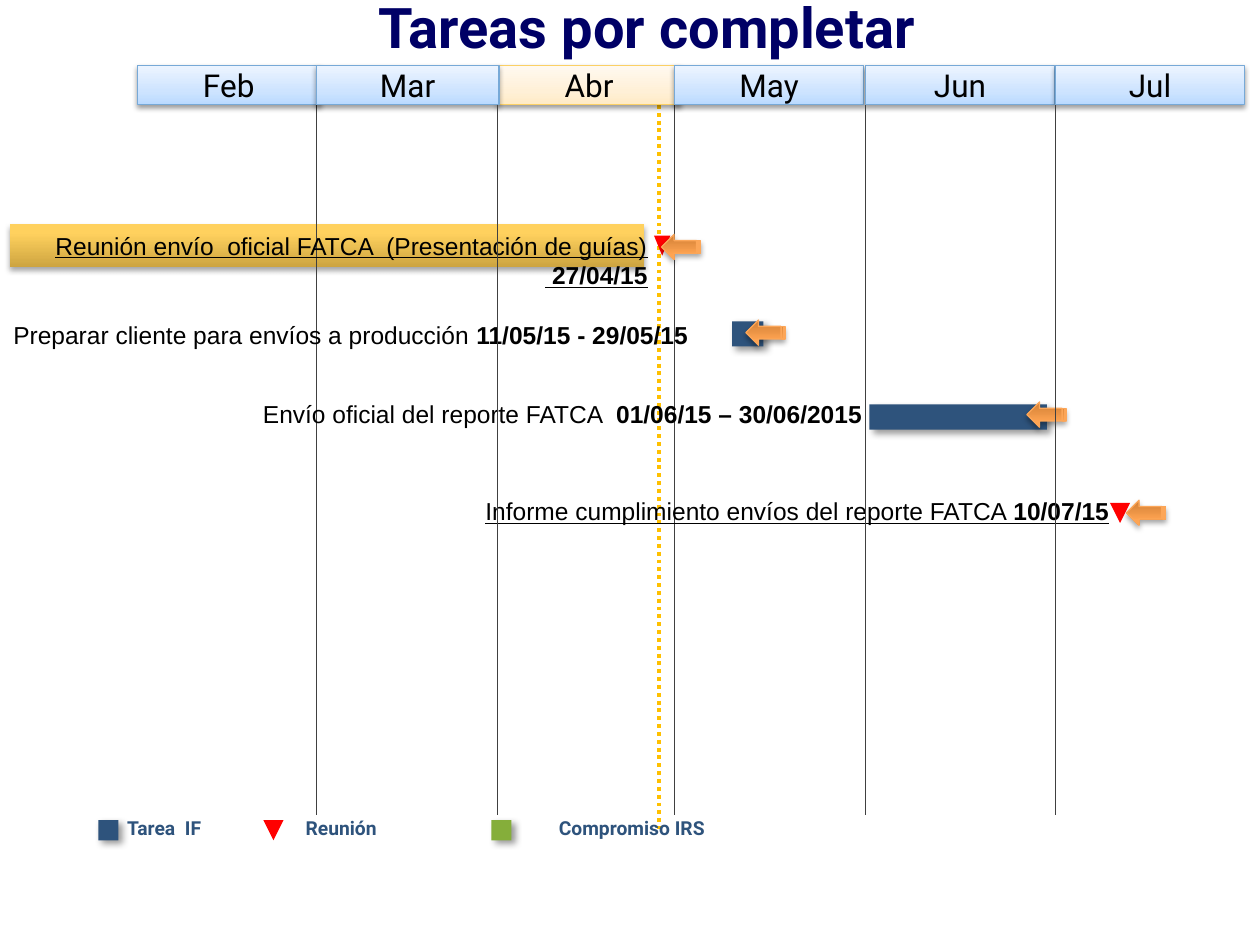
from copy import deepcopy

from lxml.etree import SubElement
from pptx import Presentation
from pptx.dml.color import RGBColor
from pptx.enum.dml import MSO_LINE
from pptx.enum.shapes import MSO_CONNECTOR, MSO_SHAPE
from pptx.enum.text import MSO_ANCHOR, PP_ALIGN
from pptx.oxml.ns import qn
from pptx.util import Pt

COLOURS = {
    "title": "000066", "text": "000000", "task": "2E537C", "meeting": "FF0000",
    "irs": "85AE3A", "grid": "404040", "today": "FFC000",
    "month_line": "77A9D7", "current_line": "FBD065", "arrow_line": "FCA658",
}
GRADIENTS = {
    "month": [(0, "BADAFF"), (0.35, "CEE4FF"), (1, "ECF4FF")],
    "current": [(0, "FFEBC6"), (0.35, "FFF0D7"), (1, "FFF9F0")],
    "highlight": [(0, "CDA440"), (0.8, "FFD15E"), (1, "FFD15F")],
    "arrow": [(0, "CF7E34"), (0.8, "FFA452"), (1, "FFA554")],
}
SHADOWS = {
    "month": (38, 3.1, 1.6, 90),
    "glow": (35, 3.1, 1.8, 90),
    "bar": (40, 4, 3, 45),
}
MONTHS = {
    "Abr": (284.4, 104.4), "Feb": (78.5, 104.4), "Mar": (180.7, 104.4),
    "May": (385.5, 108), "Jun": (494.6, 108), "Jul": (603.2, 108),
}
MONTH_TOP, MONTH_HEIGHT = 37.6, 22.2
GRID_TOP, GRID_BOTTOM = 60, 465.5
LEGEND_TOP, MARK_SIZE = 468.7, 11.5
LABELS = [
    ((8.6, 128.2, 368.6, 41), True,
     [[("Reunión envío  oficial FATCA  (Presentación de guías)", False)],
      [(" ", False), ("27/04/15", True)]]),
    ((-106.6, 179.3, 506.9, 24.5), False,
     [[("Preparar cliente para envíos a producción ", False),
       ("11/05/15 - 29/05/15", True)]]),
    ((135.4, 224.6, 364.3, 41), False,
     [[("Envío oficial del reporte FATCA  ", False),
       ("01/06/15 – 30/06/2015", True)]]),
    ((174.2, 280.1, 466.6, 24.5), True,
     [[("Informe cumplimiento envíos del reporte FATCA ", False),
       ("10/07/15", True)]]),
]
TASK_BARS = [(418.3, 183.6, 18, 14.4), (496.8, 231.1, 101.5, 14.4)]
MEETINGS = [(373.7, 134.6, 9.4, 11.5), (634.3, 287.3, 11.5, 11.5),
            (150.5, LEGEND_TOP, MARK_SIZE, MARK_SIZE)]
ARROWS = [(378, 133.9), (426.2, 182.9), (586.8, 229.7), (643.7, 285.8)]


def rgb(name):
    return RGBColor.from_string(COLOURS[name])


def style_font(font, size, name, colour, bold=False):
    font.size, font.name, font.bold = Pt(size), name, bold
    font.color.rgb = rgb(colour)


def add_shadow(shape, name):
    alpha, blur, distance, angle = SHADOWS[name]
    effects = shape._element.spPr.find(qn("a:effectLst"))
    outer = SubElement(effects, qn("a:outerShdw"), blurRad=str(Pt(blur)),
                       dist=str(Pt(distance)), dir=str(angle * 60000),
                       rotWithShape="0")
    tone = SubElement(outer, qn("a:srgbClr"), val=COLOURS["text"])
    SubElement(tone, qn("a:alpha"), val=str(alpha * 1000))


def fill_gradient(shape, name):
    shape.fill.gradient()
    shape.fill.gradient_angle = 90
    stop_list = shape._element.spPr.find(".//" + qn("a:gsLst"))
    stop_list.append(deepcopy(stop_list[0]))
    for stop, (position, colour) in zip(shape.fill.gradient_stops, GRADIENTS[name]):
        stop.position = position
        stop.color.rgb = RGBColor.from_string(colour)


def add_block(slide, kind, box, fill, line=None, shadow=None, rotation=0):
    block = slide.shapes.add_shape(kind, *map(Pt, box))
    block.rotation = rotation
    block.shadow.inherit = False
    if fill in GRADIENTS:
        fill_gradient(block, fill)
    else:
        block.fill.solid()
        block.fill.fore_color.rgb = rgb(fill)
    if line:
        block.line.color.rgb = rgb(line)
        block.line.width = Pt(0.75)
    else:
        block.line.fill.background()
    if shadow:
        add_shadow(block, shadow)
    return block


def add_month(slide, month):
    left, width = MONTHS[month]
    style = "current" if month == "Abr" else "month"
    header = add_block(slide, MSO_SHAPE.RECTANGLE,
                       (left, MONTH_TOP, width, MONTH_HEIGHT),
                       style, style + "_line", "month")
    frame = header.text_frame
    frame.text = month
    frame.vertical_anchor = MSO_ANCHOR.MIDDLE
    frame.paragraphs[0].alignment = PP_ALIGN.CENTER
    style_font(frame.paragraphs[0].runs[0].font, 18, "Roboto", "text")


def add_date_line(slide, x, bottom, colour, width):
    date_line = slide.shapes.add_connector(
        MSO_CONNECTOR.STRAIGHT, Pt(x), Pt(GRID_TOP), Pt(x), Pt(bottom))
    date_line.line.color.rgb = rgb(colour)
    date_line.line.width = Pt(width)
    date_line.line.dash_style = MSO_LINE.ROUND_DOT
    SubElement(date_line._element.spPr, qn("a:effectLst"))


def add_month_lines(slide, months):
    for month in months:
        add_date_line(slide, MONTHS[month][0], GRID_BOTTOM, "grid", 0.25)


def add_label(slide, box, underlined, lines):
    frame = slide.shapes.add_textbox(*map(Pt, box)).text_frame
    frame.word_wrap = True
    for index, parts in enumerate(lines):
        paragraph = frame.add_paragraph() if index else frame.paragraphs[0]
        paragraph.alignment = PP_ALIGN.RIGHT
        for words, bold in parts:
            run = paragraph.add_run()
            run.text = words
            style_font(run.font, 14, "Arial", "text", bold)
            run.font.underline = underlined


def add_title(slide):
    title = slide.shapes.title
    title.left, title.top, title.width, title.height = map(Pt, (44.6, -7.9, 650.2, 46))
    frame = title.text_frame
    frame.text = "Tareas por completar"
    frame.vertical_anchor = MSO_ANCHOR.TOP
    frame.paragraphs[0].alignment = PP_ALIGN.CENTER
    style_font(frame.paragraphs[0].runs[0].font, 32, "Roboto", "title", True)


def add_legend(slide):
    for left, colour in ((56.2, "task"), (280.8, "irs")):
        add_block(slide, MSO_SHAPE.RECTANGLE,
                  (left, LEGEND_TOP, MARK_SIZE, MARK_SIZE), colour, shadow="bar")
    frame = slide.shapes.add_textbox(Pt(65.5), Pt(463), Pt(380.2), Pt(20.9)).text_frame
    frame.word_wrap = True
    paragraph = frame.paragraphs[0]
    paragraph.text = "Tarea  IF\tReunión\tCompromiso IRS"
    tabs = SubElement(paragraph._p.get_or_add_pPr(), qn("a:tabLst"))
    for position in (102, 246.7):
        SubElement(tabs, qn("a:tab"), pos=str(Pt(position)), algn="l")
    for run in paragraph.runs:
        style_font(run.font, 11, "Roboto", "task", True)


def main():
    deck = Presentation()
    deck.slide_width, deck.slide_height = Pt(720), Pt(540)
    slide = deck.slides.add_slide(deck.slide_layouts[5])
    add_title(slide)
    add_date_line(slide, 376.6, 473.8, "today", 2.25)
    add_block(slide, MSO_SHAPE.RECTANGLE, (5.8, 128.2, 362.2, 24.5),
              "highlight", shadow="glow")
    add_month_lines(slide, ("Mar", "May"))
    add_legend(slide)
    for month in MONTHS:
        add_month(slide, month)
    for box in TASK_BARS:
        add_block(slide, MSO_SHAPE.RECTANGLE, box, "task", shadow="bar")
    for box in MEETINGS:
        add_block(slide, MSO_SHAPE.ISOSCELES_TRIANGLE, box, "meeting", rotation=180)
    for box, underlined, lines in LABELS:
        add_label(slide, box, underlined, lines)
    for left, top in ARROWS:
        add_block(slide, MSO_SHAPE.STRIPED_RIGHT_ARROW, (left, top, 22.3, 14.4),
                  "arrow", "arrow_line", "glow", 180)
    add_month_lines(slide, ("Abr", "Jun", "Jul"))
    deck.save("out.pptx")


if __name__ == "__main__":
    main()
